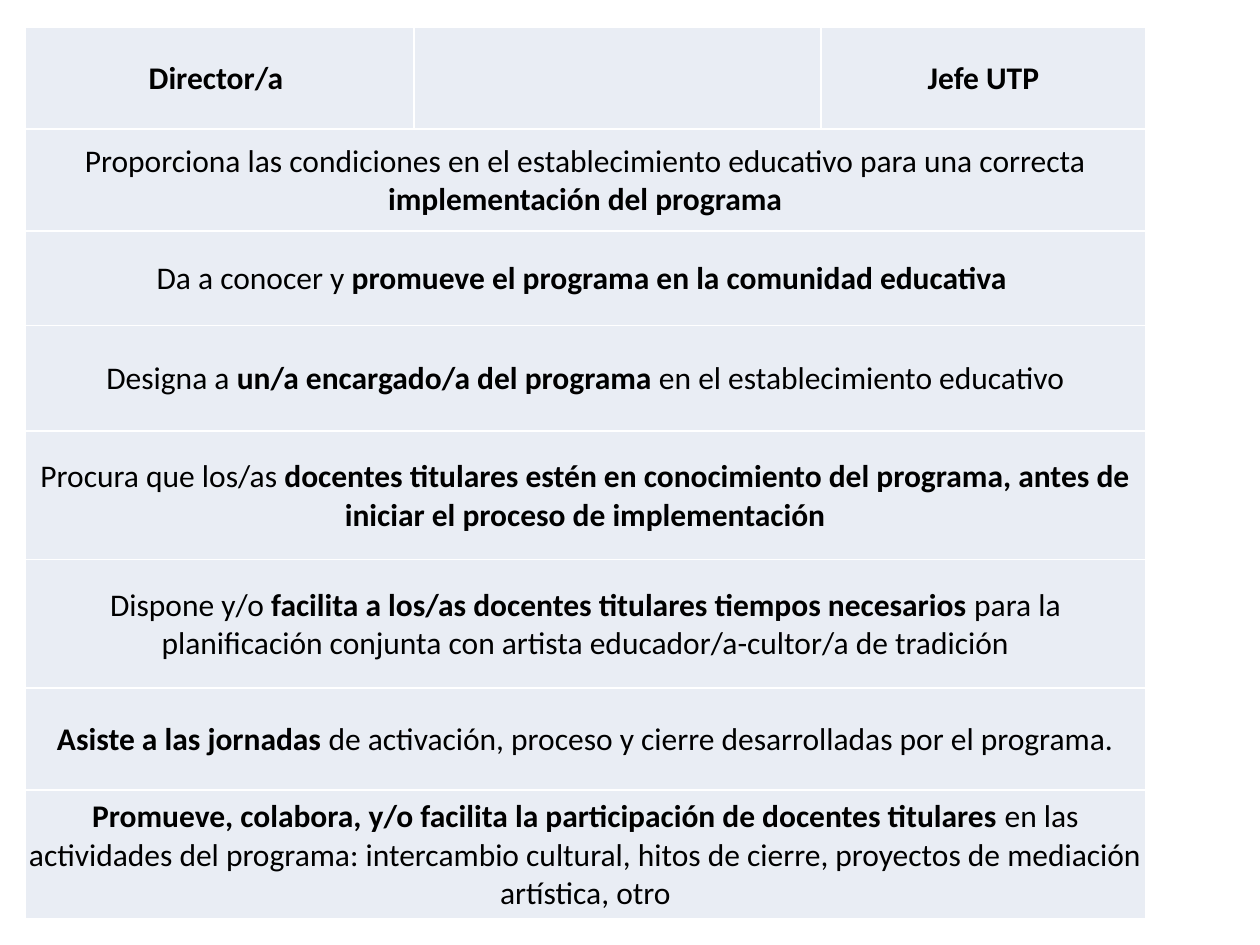
from dataclasses import dataclass

from lxml import etree
from pptx import Presentation
from pptx.dml.color import RGBColor
from pptx.enum.text import MSO_ANCHOR, PP_ALIGN
from pptx.oxml.ns import qn
from pptx.util import Cm, Pt

CENTER = PP_ALIGN.CENTER
MIDDLE = MSO_ANCHOR.MIDDLE
BLANK_LAYOUT = 6


@dataclass(frozen=True)
class Theme:
    font: str = "Calibri"
    size: Pt = Pt(18)
    text: RGBColor = RGBColor(0x00, 0x00, 0x00)
    cell: RGBColor = RGBColor(0xE9, 0xED, 0xF4)
    border: RGBColor = RGBColor(0xFF, 0xFF, 0xFF)
    border_width: Pt = Pt(1)


THEME = Theme()

COLUMN_WIDTHS = (7.85, 8.2, 6.55)
ROW_HEIGHTS = (2.06, 2.06, 1.9, 2.13, 2.59, 2.59, 2.06, 2.59)

# Each text is a list of (words, bold) pieces
ROLES = ([("Director/a ", True)], [], [("Jefe UTP", True)])
DUTIES = (
    [("Proporciona las condiciones en el establecimiento educativo para una correcta ", False),
     ("implementación del programa", True)],
    [("Da a conocer y ", False),
     ("promueve el programa en la comunidad educativa ", True)],
    [("Designa a ", False),
     ("un/a encargado/a del programa ", True),
     ("en el establecimiento educativo", False)],
    [("Procura que los/as ", False),
     ("docentes titulares estén en conocimiento del programa, "
      "antes de iniciar el proceso de implementación", True)],
    [("Dispone y/o ", False),
     ("facilita a los/as docentes titulares tiempos necesarios ", True),
     ("para la planificación conjunta con artista educador/a-cultor/a de tradición", False)],
    [("Asiste a las jornadas ", True),
     ("de activación, proceso y cierre desarrolladas por el programa.", False)],
    [("Promueve, colabora, y/o facilita la participación de docentes titulares ", True),
     ("en las actividades del programa: intercambio cultural, hitos de cierre, "
      "proyectos de mediación artística, otro", False)],
)


def set_borders(cell):
    properties = cell._tc.get_or_add_tcPr()
    for position, side in enumerate(("a:lnL", "a:lnR", "a:lnT", "a:lnB")):
        line = etree.Element(qn(side), w=str(THEME.border_width))
        fill = etree.SubElement(line, qn("a:solidFill"))
        etree.SubElement(fill, qn("a:srgbClr"), val=str(THEME.border))
        properties.insert(position, line)


def style_cell(cell):
    cell.fill.solid()
    cell.fill.fore_color.rgb = THEME.cell
    cell.vertical_anchor = MIDDLE
    cell.margin_left = cell.margin_right = cell.margin_top = Cm(0.03)
    cell.margin_bottom = 0
    set_borders(cell)


def write_cell(cell, pieces):
    paragraph = cell.text_frame.paragraphs[0]
    paragraph.alignment = CENTER
    paragraph.font.name = THEME.font
    paragraph.font.size = THEME.size
    paragraph.font.color.rgb = THEME.text
    for words, bold in pieces:
        run = paragraph.add_run()
        run.text = words
        run.font.bold = bold


def add_duties_table(slide):
    frame = slide.shapes.add_table(
        len(ROW_HEIGHTS), len(COLUMN_WIDTHS), Cm(0.5), Cm(0.54),
        Cm(sum(COLUMN_WIDTHS)), Cm(sum(ROW_HEIGHTS)))
    duties_table = frame.table
    duties_table.first_row = duties_table.horz_banding = False
    for column, width in zip(duties_table.columns, COLUMN_WIDTHS):
        column.width = Cm(width)
    for row, height in zip(duties_table.rows, ROW_HEIGHTS):
        row.height = Cm(height)
    for cell in duties_table.iter_cells():
        style_cell(cell)

    # Header: one role per column
    for column, role in enumerate(ROLES):
        write_cell(duties_table.cell(0, column), role)

    # Shared duties: one per full-width row
    last_column = len(COLUMN_WIDTHS) - 1
    for row, duty in enumerate(DUTIES, start=1):
        duty_cell = duties_table.cell(row, 0)
        duty_cell.merge(duties_table.cell(row, last_column))
        write_cell(duty_cell, duty)


def main():
    presentation = Presentation()
    presentation.slide_width = Cm(25.4)
    presentation.slide_height = Cm(19.05)
    slide = presentation.slides.add_slide(presentation.slide_layouts[BLANK_LAYOUT])
    add_duties_table(slide)
    presentation.save("out.pptx")


if __name__ == "__main__":
    main()
